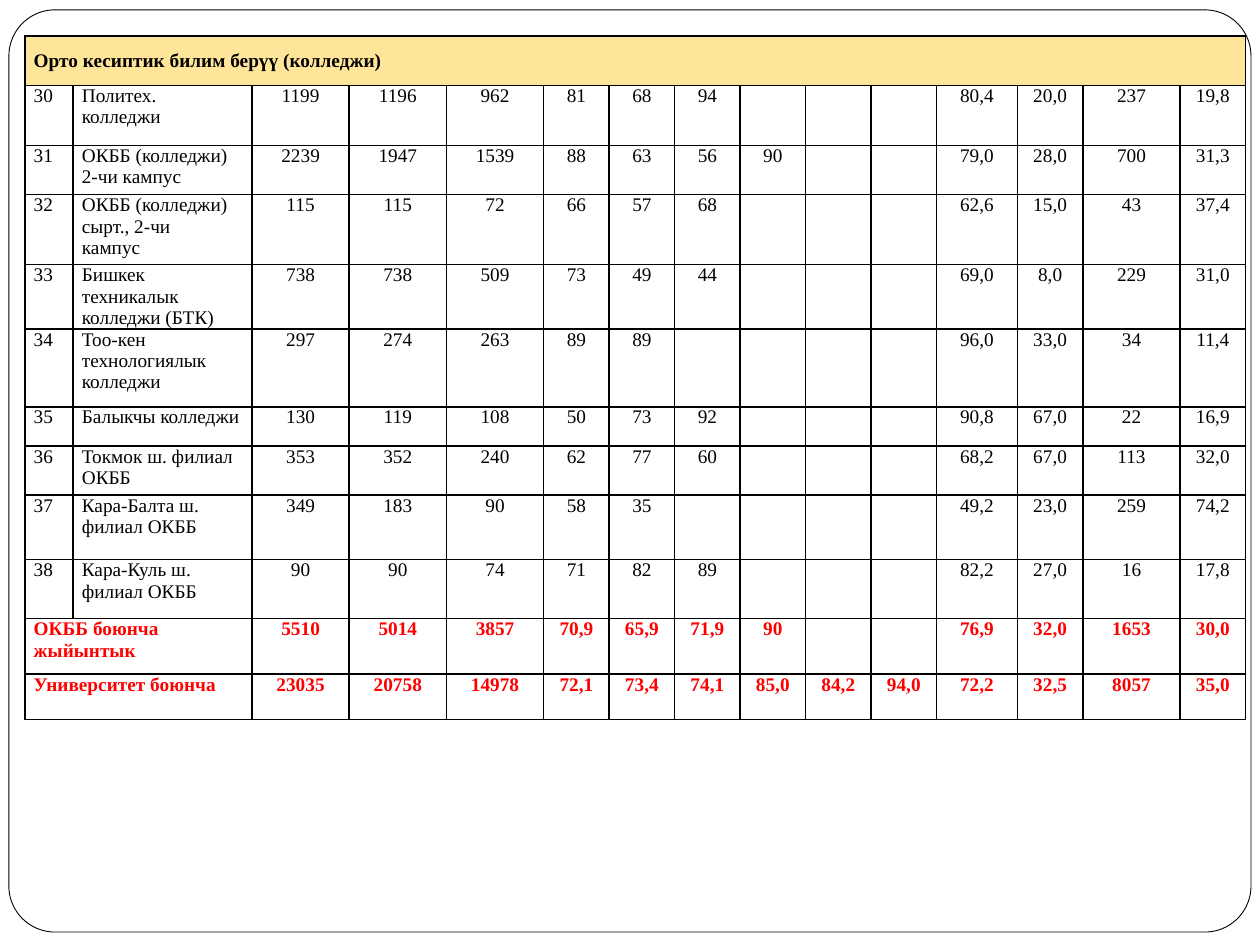
from pptx import Presentation
from pptx.dml.color import RGBColor
from pptx.enum import shapes, text
from pptx.oxml import parse_xml
from pptx.oxml.ns import nsdecls
from pptx.util import Cm, Pt

BLACK = RGBColor(0x00, 0x00, 0x00)
WHITE = RGBColor(0xFF, 0xFF, 0xFF)
RED = RGBColor(0xFF, 0x00, 0x00)
SAND = RGBColor(0xFF, 0xE5, 0x99)
LEFT, MID = text.PP_ALIGN.LEFT, text.PP_ALIGN.CENTER
TOP, MIDDLE = text.MSO_ANCHOR.TOP, text.MSO_ANCHOR.MIDDLE

HEAD = "Орто кесиптик билим берүү (колледжи)"
ROWS = [
    ("30", "Политех.\nколледжи", "1199 1196 962 81 68 94 - - - 80,4 20,0 237 19,8"),
    ("31", "ОКББ (колледжи) 2-чи кампус", "2239 1947 1539 88 63 56 90 - - 79,0 28,0 700 31,3"),
    ("32", "ОКББ (колледжи) сырт., 2-чи\nкампус", "115 115 72 66 57 68 - - - 62,6 15,0 43 37,4"),
    ("33", "Бишкек техникалык колледжи (БТК)", "738 738 509 73 49 44 - - - 69,0 8,0 229 31,0"),
    ("34", "Тоо-кен технологиялык колледжи", "297 274 263 89 89 - - - - 96,0 33,0 34 11,4"),
    ("35", "Балыкчы колледжи", "130 119 108 50 73 92 - - - 90,8 67,0 22 16,9"),
    ("36", "Токмок ш. филиал ОКББ", "353 352 240 62 77 60 - - - 68,2 67,0 113 32,0"),
    ("37", "Кара-Балта ш. филиал ОКББ", "349 183 90 58 35 - - - - 49,2 23,0 259 74,2"),
    ("38", "Кара-Куль ш. филиал ОКББ", "90 90 74 71 82 89 - - - 82,2 27,0 16 17,8"),
    ("ОКББ боюнча жыйынтык", "", "5510 5014 3857 70,9 65,9 71,9 90 - - 76,9 32,0 1653 30,0"),
    ("Университет боюнча", "", "23035 20758 14978 72,1 73,4 74,1 85,0 84,2 94,0 72,2 32,5 8057 35,0"),
]
WIDE = [0.97, 3.61] + [1.96] * 3 + [1.32] * 6 + [1.63, 1.32, 1.96, 1.32]
HIGH = [0.99, 1.21, 0.99, 1.41, 1.3, 1.57, 0.79, 0.99, 1.3, 1.19, 1.12, 0.91]


def write(cell, words, color=BLACK, bold=False, align=LEFT, anchor=TOP):
    cell.vertical_anchor = anchor
    frame = cell.text_frame
    for i, line in enumerate(words.split("\n")):
        para = frame.add_paragraph() if i else frame.paragraphs[0]
        para.alignment = align
        run = para.add_run()
        run.text = line
        font = run.font
        font.name, font.size, font.bold = "Times New Roman", Pt(11), bold
        font.color.rgb = color


def dress(cell, fill):
    cell.margin_left = cell.margin_right = Cm(0.18)
    cell.margin_top = cell.margin_bottom = 0
    props = cell._tc.get_or_add_tcPr()
    for side in "LRTB":
        props.append(parse_xml(
            f'<a:ln{side} {nsdecls("a")} w="12700"><a:solidFill>'
            f'<a:srgbClr val="{BLACK}"/></a:solidFill></a:ln{side}>'))
    cell.fill.solid()
    cell.fill.fore_color.rgb = fill


deck = Presentation()
deck.slide_width, deck.slide_height = Cm(25.4), Cm(19.05)
slide = deck.slides.add_slide(deck.slide_layouts[6])

panel = slide.shapes.add_shape(
    shapes.MSO_SHAPE.ROUNDED_RECTANGLE, Cm(0.18), Cm(0.2), Cm(25.04), Cm(18.59))
panel.adjustments[0] = 0.05
panel.shadow.inherit = False
panel.fill.solid()
panel.fill.fore_color.rgb = WHITE
panel.line.color.rgb = BLACK
panel.line.width = Pt(0.5)

table = slide.shapes.add_table(
    len(HIGH), len(WIDE), Cm(0.5), Cm(0.73), Cm(sum(WIDE)), Cm(sum(HIGH))).table
table.first_row = table.horz_banding = False
for col, size in zip(table.columns, WIDE):
    col.width = Cm(size)
for row, size in zip(table.rows, HIGH):
    row.height = Cm(size)
for r in range(len(HIGH)):
    for c in range(len(WIDE)):
        dress(table.cell(r, c), WHITE if r else SAND)

table.cell(0, 0).merge(table.cell(0, len(WIDE) - 1))
write(table.cell(0, 0), HEAD, bold=True, anchor=MIDDLE)
for r, (first, name, data) in enumerate(ROWS, 1):
    total = not name
    look = {"color": RED if total else BLACK, "bold": total}
    write(table.cell(r, 0), first, **look)
    if total:
        table.cell(r, 0).merge(table.cell(r, 1))
    else:
        write(table.cell(r, 1), name, **look)
    for c, value in enumerate(data.split(), 2):
        write(table.cell(r, c), value.replace("-", ""), align=MID, **look)

deck.save("out.pptx")
